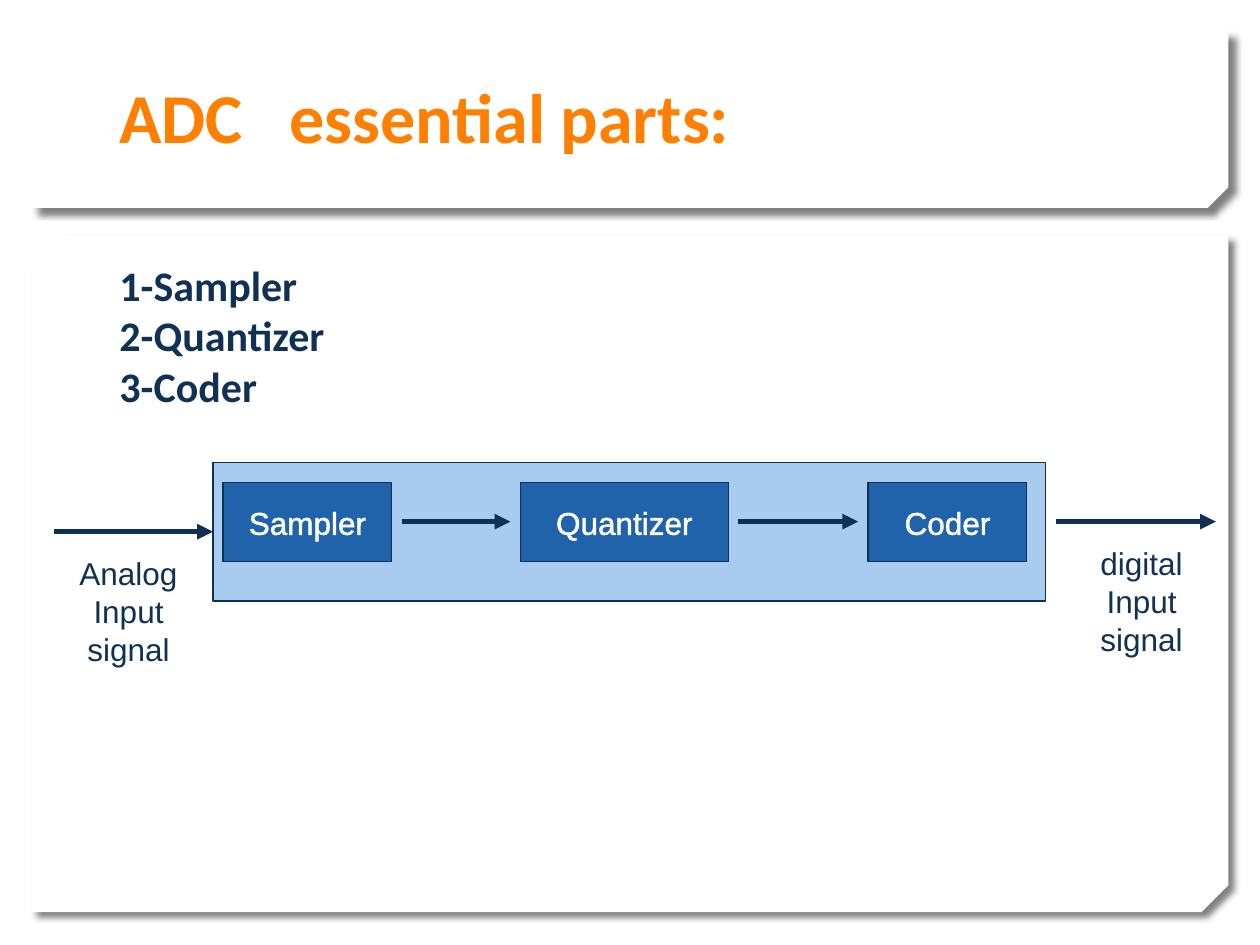
from lxml import etree
from pptx import Presentation
from pptx import util as u
from pptx.dml.color import RGBColor
from pptx.enum import shapes, text
from pptx.oxml import parse_xml
from pptx.oxml.ns import nsdecls, qn

NAVY = RGBColor(0x10, 0x31, 0x54)
BLUE = RGBColor(0x20, 0x63, 0xAA)
PALE_BLUE = RGBColor(0xA9, 0xCB, 0xEF)
ORANGE = RGBColor(0xFF, 0x7F, 0x01)
WHITE = RGBColor(0xFF, 0xFF, 0xFF)

COLUMNS, ROWS = 100, 75
PANEL_SHADOW = f"""<a:effectLst {nsdecls("a")}>
  <a:outerShdw blurRad="50800" dist="63500" dir="2700000" algn="tl" rotWithShape="0">
    <a:srgbClr val="000000"><a:alpha val="50000"/></a:srgbClr>
  </a:outerShdw>
</a:effectLst>"""
TEXT_OUTLINE = f"""<a:ln {nsdecls("a")} w="18415">
  <a:solidFill><a:srgbClr val="FFFFFF"/></a:solidFill>
</a:ln>"""


class Deck:
    """Holds the style and the current slide; lengths are grid columns and rows."""

    def __init__(self):
        self.presentation = Presentation()
        self.presentation.slide_width = u.Inches(10)
        self.presentation.slide_height = u.Inches(7.5)
        self.column = self.presentation.slide_width / COLUMNS
        self.row = self.presentation.slide_height / ROWS
        self.slide = self.presentation.slides.add_slide(self.presentation.slide_layouts[6])

    def place(self, x, y):
        return round(x * self.column), round(y * self.row)

    def shape(self, kind, left, top, width, height, fill, line=None):
        shape = self.slide.shapes.add_shape(
            kind, *self.place(left, top), *self.place(width, height))
        shape.shadow.inherit = False
        shape.fill.solid()
        shape.fill.fore_color.rgb = fill
        if line is None:
            shape.line.fill.background()
        else:
            shape.line.color.rgb = line
            shape.line.width = u.Pt(0.75)
        return shape

    def panel(self, top, height, snip):
        """White card with a cut lower right corner and a soft shadow."""
        panel = self.shape(shapes.MSO_SHAPE.SNIP_2_DIAG_RECTANGLE, 2.5, top, 95, height, WHITE)
        panel.adjustments[0] = 0
        panel.adjustments[1] = snip
        properties = panel.element.spPr
        properties.find(qn("a:xfrm")).set("flipV", "1")
        properties.replace(properties.find(qn("a:effectLst")), parse_xml(PANEL_SHADOW))

    def rectangle(self, left, top, width, height, fill, line=None):
        return self.shape(shapes.MSO_SHAPE.RECTANGLE, left, top, width, height, fill, line)

    def text_box(self, left, top, width, height):
        return self.slide.shapes.add_textbox(
            *self.place(left, top), *self.place(width, height))

    def add_text(self, shape, lines, size, color, font="Arial", bold=False, centred=True,
                 anchor=text.MSO_ANCHOR.MIDDLE):
        """Add one paragraph per line; centred text is not wrapped."""
        frame = shape.text_frame
        frame.word_wrap = not centred
        frame.vertical_anchor = anchor
        for index, line in enumerate(lines):
            paragraph = frame.add_paragraph() if index else frame.paragraphs[0]
            paragraph.alignment = text.PP_ALIGN.CENTER if centred else text.PP_ALIGN.LEFT
            run = paragraph.add_run()
            run.text = line
            run.font.size = u.Pt(size)
            run.font.name = font
            run.font.bold = bold
            run.font.color.rgb = color
        return frame

    def title(self, line, tab):
        """Add the heading; a tab in it jumps to the given column of the box."""
        box = self.text_box(8.5, 0, 82.9, 12.5)
        frame = self.add_text(box, [line], 40, ORANGE, "Calibri", True, False,
                              text.MSO_ANCHOR.BOTTOM)
        frame.margin_bottom = 0
        tabs = etree.SubElement(frame.paragraphs[0]._p.get_or_add_pPr(), qn("a:tabLst"))
        etree.SubElement(tabs, qn("a:tab"), pos=str(round(tab * self.column)), algn="l")

    def block(self, name, left, width):
        block = self.rectangle(left, 38.3, width, 6.3, BLUE, NAVY)
        frame = self.add_text(block, [name], 18, WHITE)
        for run in frame.paragraphs[0].runs:
            run.font._element.insert(0, parse_xml(TEXT_OUTLINE))

    def arrow(self, start, end, y):
        arrow = self.slide.shapes.add_connector(
            shapes.MSO_CONNECTOR.STRAIGHT, *self.place(start, y), *self.place(end, y))
        arrow.line.color.rgb = NAVY
        arrow.line.width = u.Pt(3)
        properties = arrow.element.spPr
        etree.SubElement(properties.find(qn("a:ln")), qn("a:tailEnd"), type="triangle")
        etree.SubElement(properties, qn("a:effectLst"))


def main():
    deck = Deck()
    deck.panel(18.7, 53.7, 0.04)
    deck.panel(2.5, 14, 0.117)
    deck.title("ADC\tessential parts:", 13.5)

    converter_left, converter_width, gap = 16.9, 66.1, 0.8
    flow_y, input_y = 41.4, 42.2
    deck.arrow(4.3, converter_left, input_y)
    deck.rectangle(converter_left, 36.7, converter_width, 11, PALE_BLUE, NAVY)
    deck.arrow(converter_left + converter_width + gap, 96.5, flow_y)

    blocks = [("Sampler", 17.7, 13.4), ("Quantizer", 41.3, 16.5), ("Coder", 68.9, 12.6)]
    for name, left, width in blocks:
        deck.block(name, left, width)
    for (_, left, width), (_, next_left, _) in zip(blocks, blocks[1:]):
        deck.arrow(left + width + gap, next_left - gap, flow_y)

    input_label = deck.rectangle(4.3, 43.8, 11.8, 9.4, WHITE)
    output_label = deck.text_box(84.7, 43, 11.8, 9.4)
    for label, kind in ((input_label, "Analog"), (output_label, "digital")):
        deck.add_text(label, [kind, "Input", "signal"], 18, NAVY)

    deck.add_text(deck.text_box(8.5, 20.1, 50, 13.1), ["1-Sampler", "2-Quantizer", "3-Coder"],
                  24, NAVY, "Calibri", True, False, text.MSO_ANCHOR.TOP)
    deck.presentation.save("out.pptx")


if __name__ == "__main__":
    main()
